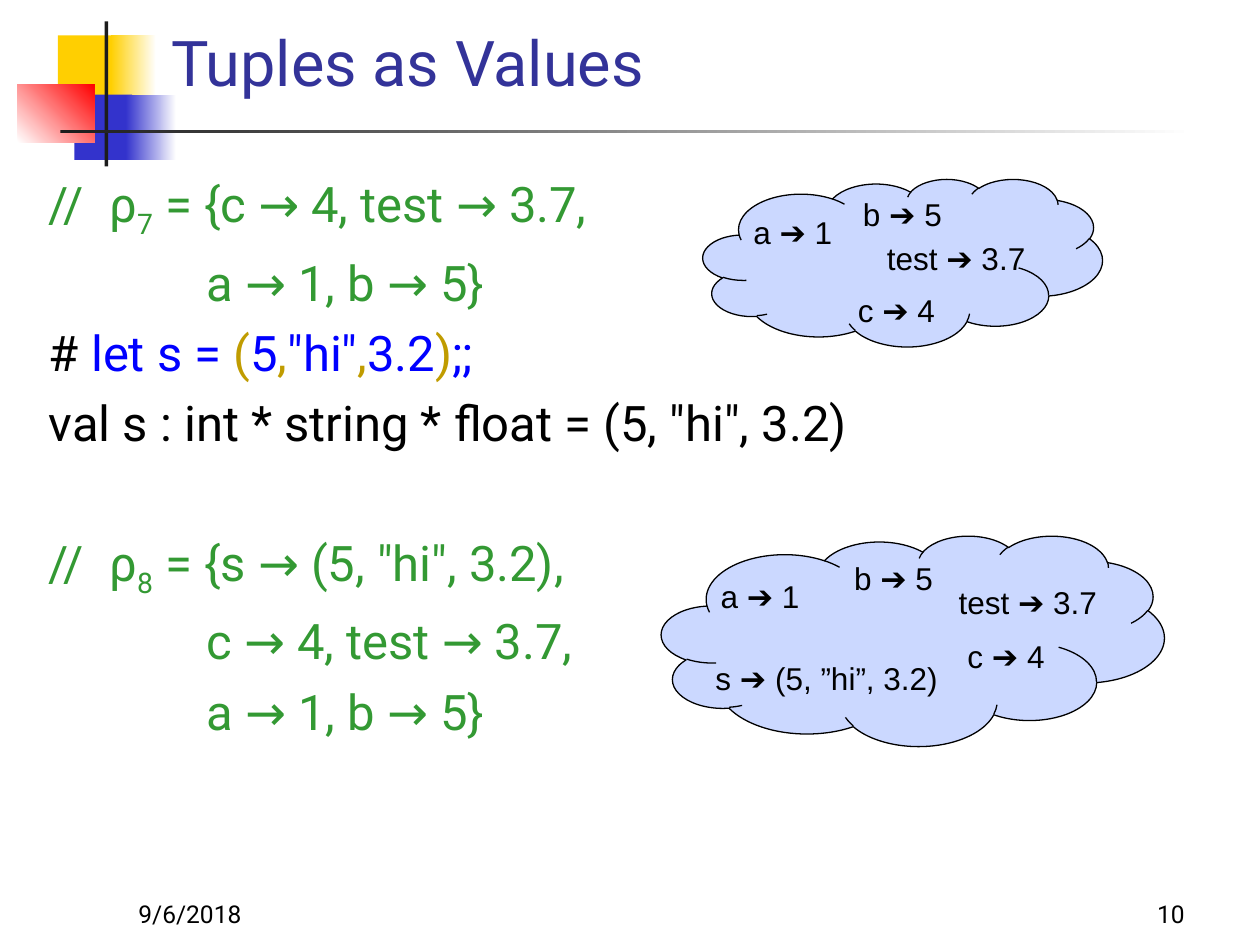
import pptx
import pptx.util
import pptx.dml.color
import pptx.enum.shapes
import pptx.enum.text
import pptx.oxml.ns
import lxml.etree

Inches = pptx.util.Inches
Pt = pptx.util.Pt
SHAPE = pptx.enum.shapes.MSO_SHAPE
ANCHOR = pptx.enum.text.MSO_ANCHOR
ALIGN = pptx.enum.text.PP_ALIGN
AUTO = pptx.enum.text.MSO_AUTO_SIZE

COLORS = {
    "yellow": "FFCF01", "blue": "3333CC", "red": "FF0000", "white": "FFFFFF",
    "dark": "1C1C1C", "title": "333399", "env": "339933", "code": "0000FF",
    "punct": "C09C00", "black": "000000", "cloud": "3366FF",
}


def rgb(name):
    """Return the named colour."""
    return pptx.dml.color.RGBColor.from_string(COLORS[name])


def add_block(shapes, x, y, w, h, start, end=None, angle=0):
    """Add a borderless rectangle, solid or with a two-colour gradient."""
    sp = shapes.add_shape(SHAPE.RECTANGLE, Inches(x), Inches(y), Inches(w), Inches(h))
    sp.shadow.inherit = False
    sp.line.fill.background()
    if end is None:
        sp.fill.solid()
        sp.fill.fore_color.rgb = rgb(start)
        return
    sp.fill.gradient()
    sp.fill.gradient_angle = angle
    for stop, name, position in zip(sp.fill.gradient_stops, (start, end), (0, 1)):
        stop.color.rgb = rgb(name)
        stop.position = position


def add_run(p, text, size, font, color, baseline=None):
    """Append one formatted run."""
    r = p.add_run()
    r.text = text
    r.font.size = Pt(size)
    r.font.name = font
    r.font.color.rgb = rgb(color)
    if baseline:
        r.font._element.set("baseline", str(baseline * 1000))


def add_box(shapes, x, y, w, h, anchor=ANCHOR.TOP, wrap=True):
    """Add an empty text box and return its text frame."""
    tf = shapes.add_textbox(Inches(x), Inches(y), Inches(w), Inches(h)).text_frame
    tf.word_wrap = wrap
    tf.vertical_anchor = anchor
    return tf


def add_ornament(s, x, y):
    """Draw the coloured blocks and the crossing rules."""
    add_block(s.shapes, x + 0.32, y + 0.11, 0.48, 0.52, "yellow")
    add_block(s.shapes, x + 0.74, y + 0.11, 0.36, 0.52, "yellow", "white")
    add_block(s.shapes, x + 0.45, y + 0.58, 0.46, 0.52, "blue")
    add_block(s.shapes, x + 0.86, y + 0.58, 0.4, 0.52, "blue", "white")
    add_block(s.shapes, x, y + 0.5, 0.61, 0.46, "white", "red", 45)
    add_block(s.shapes, x + 0.69, y, 0.03, 1.15, "dark")
    add_block(s.shapes, x + 0.34, y + 0.86, 9, 0.03, "dark", "white")


def add_line(s, x, y, w, h, text, size, color, align=ALIGN.LEFT):
    """Add a single bottom-anchored line of text."""
    p = add_box(s.shapes, x, y, w, h, ANCHOR.BOTTOM).paragraphs[0]
    p.alignment = align
    add_run(p, text, size, "Roboto", color)


def add_code(s, x, y, w, h):
    """Write the interpreter session with its environments."""
    statement = [("# ", "black"), ("let s = ", "code"), ("(", "punct"), ("5", "code"),
                 (",", "punct"), ('"hi"', "code"), (",", "punct"), ("3.2", "code"),
                 (")", "punct"), (";;", "code")]
    hang, deep = (0.48, -0.48), (1.25, 0)
    lines = [
        (hang, 6.6, [("//\tρ", "env"), ("7", "env", -25), (" = {c → 4, test → 3.7,", "env")]),
        (deep, 6.6, [("a → 1, b → 5}", "env")]),
        (hang, 6.6, statement),
        (hang, 6.6, [('val s : int * string * float = (5, "hi", 3.2)', "black")]),
        (hang, 46, [("//\tρ", "env"), ("8", "env", -25), (' = {s → (5, "hi", 3.2),', "env")]),
        (deep, 6.6, [("c → 4, test → 3.7,", "env")]),
        (deep, 6.6, [("a → 1, b → 5}", "env")]),
    ]
    tf = add_box(s.shapes, x, y, w, h)
    for i, ((margin, indent), before, runs) in enumerate(lines):
        p = tf.add_paragraph() if i else tf.paragraphs[0]
        p.space_before = Pt(before)
        pPr = p._p.get_or_add_pPr()
        pPr.set("marL", str(Inches(margin)))
        pPr.set("indent", str(Inches(indent)))
        for text, color, *baseline in runs:
            add_run(p, text, 28, "Roboto", color, *baseline)


def add_cloud(s, x, y, w, h, labels):
    """Draw an environment cloud with its bindings."""
    shapes = s.shapes.add_group_shape().shapes
    sp = shapes.add_shape(SHAPE.CLOUD, Inches(x), Inches(y), Inches(w), Inches(h))
    sp.shadow.inherit = False
    sp.fill.solid()
    sp.fill.fore_color.rgb = rgb("cloud")
    clr = sp._element.spPr.find(".//" + pptx.oxml.ns.qn("a:srgbClr"))
    lxml.etree.SubElement(clr, pptx.oxml.ns.qn("a:alpha"), val="25000")
    sp.line.color.rgb = rgb("black")
    sp.line.width = Pt(0.75)
    for text, dx, dy, width, wrap in labels:
        tf = add_box(shapes, x + dx, y + dy, width, 0.4, wrap=wrap)
        tf.auto_size = AUTO.SHAPE_TO_FIT_TEXT
        add_run(tf.paragraphs[0], text, 18, "Arial", "black")


def main():
    """Build and save the slide."""
    prs = pptx.Presentation()
    prs.slide_width, prs.slide_height = Inches(10), Inches(7.5)
    s = prs.slides.add_slide(prs.slide_layouts[6])
    add_ornament(s, 0.14, 0.17)
    add_line(s, 1.26, 0.18, 8.52, 0.66, "Tuples as Values", 36, "title")
    add_code(s, 0.29, 1.33, 9.46, 5.37)
    add_line(s, 1, 6.92, 2.08, 0.5, "9/6/2018", 14, "black")
    add_line(s, 7.42, 6.92, 2.08, 0.5, "10", 14, "black", ALIGN.RIGHT)
    add_cloud(s, 5.25, 4.25, 3.99, 1.67, [
        ("s ➔ (5, ”hi”, 3.2)", 0.33, 0.93, 2.04, False),
        ("test ➔ 3.7", 2.26, 0.33, 1.9, True),
        ("a ➔ 1", 0.37, 0.28, 0.89, False),
        ("b ➔ 5", 1.43, 0.14, 0.89, False),
        ("c ➔ 4", 2.33, 0.76, 0.88, False),
    ])
    add_cloud(s, 5.58, 1.42, 3.17, 1.33, [
        ("b ➔ 5", 1.17, 0.08, 0.89, False),
        ("test ➔ 3.7", 1.36, 0.43, 1.51, True),
        ("a ➔ 1", 0.3, 0.22, 0.89, False),
        ("c ➔ 4", 1.13, 0.84, 0.88, False),
    ])
    prs.save("out.pptx")


if __name__ == "__main__":
    main()
